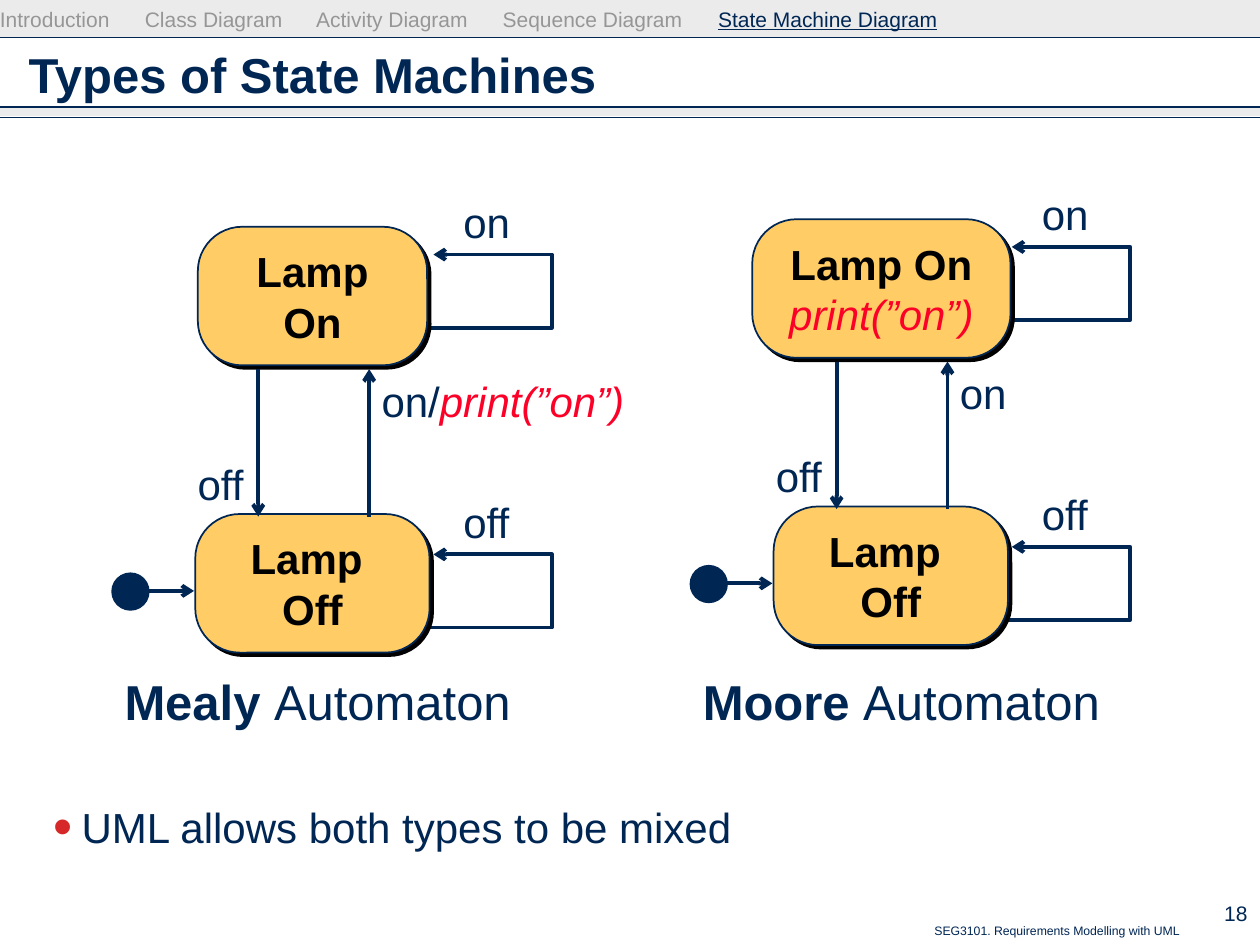
import pptx
import pptx.util
import pptx.dml.color
import pptx.enum.shapes
import pptx.enum.text
from lxml import etree

Inches = pptx.util.Inches
Pt = pptx.util.Pt
RGBColor = pptx.dml.color.RGBColor
SHAPE = pptx.enum.shapes.MSO_SHAPE
ALIGN = pptx.enum.text.PP_ALIGN
ANCHOR = pptx.enum.text.MSO_ANCHOR
AUTO_SIZE = pptx.enum.text.MSO_AUTO_SIZE

NAVY = RGBColor(0x00, 0x26, 0x54)
GRAY = RGBColor(0x96, 0x96, 0x96)
BAND = RGBColor(0xCD, 0xCD, 0xCD)
AMBER = RGBColor(0xFF, 0xCC, 0x66)
RED = RGBColor(0xFC, 0x01, 0x28)
BLACK = RGBColor(0, 0, 0)
BULLET_RED = RGBColor(0xD6, 0x28, 0x28)
ACTION = ("print(”on”)", {"color": RED, "italic": True})


def add_xml(parent, tag, **attributes):
    return etree.SubElement(parent, pptx.oxml.ns.qn(tag), attributes)


def write(para, spans, size, color=NAVY, bold=False):
    """Fill a paragraph with (text, style) spans."""
    para.text = ""
    for text, style in spans:
        span = para.add_run()
        span.text = text
        style_font(span.font, size, **{"color": color, "bold": bold, **style})


def style_font(font, size, color=NAVY, bold=False, italic=False, underline=False):
    font.name = "Arial"
    font.size = Pt(size)
    font.color.rgb = color
    font.bold = bold
    font.italic = italic
    font.underline = underline


def add_text(page, left, top, width, height, spans, size, wrap=True,
             align=ALIGN.LEFT, anchor=ANCHOR.TOP, bold=False):
    box = page.shapes.add_textbox(Inches(left), Inches(top), Inches(width), Inches(height))
    frame = box.text_frame
    frame.word_wrap = wrap
    frame.auto_size = AUTO_SIZE.NONE if wrap else AUTO_SIZE.SHAPE_TO_FIT_TEXT
    frame.vertical_anchor = anchor
    para = frame.paragraphs[0]
    para.alignment = align
    write(para, spans, size, bold=bold)
    return box


def add_label(page, left, top, spans, width=0.57):
    add_text(page, left, top, width, 0.5, spans, 24, wrap=False)


def style_line(shape, width, arrow):
    shape.line.color.rgb = NAVY
    shape.line.width = Pt(width)
    if arrow:
        add_xml(shape.line._get_or_add_ln(), "a:tailEnd", type="arrow")


def add_line(page, start, end, width=2.25, arrow=True):
    line = page.shapes.add_connector(
        pptx.enum.shapes.MSO_CONNECTOR.STRAIGHT,
        Inches(start[0]), Inches(start[1]), Inches(end[0]), Inches(end[1]))
    style_line(line, width, arrow)
    add_xml(line._element.spPr, "a:effectLst")


def add_shape(page, kind, left, top, width, height, fill):
    shape = page.shapes.add_shape(
        kind, Inches(left), Inches(top), Inches(width), Inches(height))
    shape.shadow.inherit = False
    shape.fill.solid()
    shape.fill.fore_color.rgb = fill
    return shape


def add_band(page, top, height):
    band = add_shape(page, SHAPE.RECTANGLE, 0, top, 10, height, BAND)
    band.line.fill.background()
    color = band._element.spPr.find(".//" + pptx.oxml.ns.qn("a:srgbClr"))
    add_xml(color, "a:alpha", val="40000")


def add_self_loop(page, left, top):
    """Transition that leaves a state and comes back to it."""
    right, bottom = left + 1.09, top + 0.58
    builder = page.shapes.build_freeform(Inches(left), Inches(bottom))
    corners = [(right, bottom), (right, top), (left + 0.15, top)]
    builder.add_line_segments([(Inches(x), Inches(y)) for x, y in corners], close=False)
    loop = builder.convert_to_shape()
    loop.shadow.inherit = False
    loop.fill.background()
    style_line(loop, 2.25, True)


def add_state(page, left, top, width, lines):
    state = add_shape(page, SHAPE.ROUNDED_RECTANGLE, left, top, width, 1.1, AMBER)
    state.adjustments[0] = 0.32
    style_line(state, 1, False)
    effects = state._element.spPr.find(pptx.oxml.ns.qn("a:effectLst"))
    shadow = add_xml(effects, "a:outerShdw", blurRad="0", dist=str(Pt(2.8)),
                     dir="2700000", algn="ctr", rotWithShape="0")
    add_xml(shadow, "a:srgbClr", val=str(BLACK))
    frame = state.text_frame
    frame.word_wrap = True
    frame.vertical_anchor = ANCHOR.MIDDLE
    for index, spans in enumerate(lines):
        para = frame.add_paragraph() if index else frame.paragraphs[0]
        para.alignment = ALIGN.CENTER
        write(para, spans, 24, color=BLACK)


def add_lamp_off(page, left, top):
    add_state(page, left, top, 1.86, [[]])
    para = page.shapes[-1].text_frame.paragraphs[0]
    para.text = "Lamp \vOff"
    for span in para.runs:
        style_font(span.font, 24, color=BLACK, bold=True)


def add_machine(page, left, top, name, on_left, on_width, on_lines, on_label, label_width):
    """Lamp automaton; left is its initial node, top its upper state."""
    # Self transitions
    for event, loop_top in (("on", top + 0.22), ("off", top + 2.6)):
        add_self_loop(page, left + 2.4, loop_top)
        add_label(page, left + 2.69, loop_top - 0.51, [(event, {})])

    # States
    add_state(page, on_left, top, on_width, on_lines)
    add_lamp_off(page, left + 0.66, top + 2.28)

    # Transitions between the states
    upper, lower = top + 1.13, top + 2.3
    add_line(page, (left + 1.16, upper), (left + 1.16, lower))
    add_label(page, left + 0.58, top + 1.79, [("off", {})])
    add_label(page, left + 2.04, upper, on_label, label_width)
    add_line(page, (left + 2.04, lower), (left + 2.04, upper))

    # Initial node
    add_line(page, (left + 0.14, top + 2.89), (left + 0.65, top + 2.89))
    node = add_shape(page, SHAPE.OVAL, left, top + 2.75, 0.29, 0.29, NAVY)
    style_line(node, 1, False)

    # Caption
    add_text(page, left, 5.28, 3.6, 0.57,
             [(name + " ", {"bold": True}), ("Automaton", {})], 28)


def add_navigation(page):
    chapters = ["Introduction", "Class Diagram", "Activity Diagram", "Sequence Diagram"]
    spans = [(chapter + "\t", {"color": GRAY}) for chapter in chapters]
    spans.append(("State Machine Diagram", {"underline": True}))
    box = add_text(page, 0, 0.05, 7.9, 0.25, spans, 12)
    box.text_frame.margin_left = box.text_frame.margin_top = 0
    tabs = add_xml(box.text_frame.paragraphs[0]._p.get_or_add_pPr(), "a:tabLst")
    for stop in (1.15, 2.51, 3.99, 5.7):
        add_xml(tabs, "a:tab", pos=str(Inches(stop)), algn="l")


def add_bullet(page, text):
    box = add_text(page, 0.13, 6.35, 9.74, 0.5, [(text, {})], 24)
    para = box.text_frame.paragraphs[0]
    para.line_spacing = Pt(26)
    props = para._p.get_or_add_pPr()
    props.set("marL", str(Inches(0.42)))
    props.set("indent", str(Inches(-0.22)))
    add_xml(add_xml(props, "a:buClr"), "a:srgbClr", val=str(BULLET_RED))
    add_xml(props, "a:buSzPct", val="130000")
    add_xml(props, "a:buFont", typeface="Arial")
    add_xml(props, "a:buChar", char="•")
    style_font(para.font, 24)


def main():
    deck = pptx.Presentation()
    deck.slide_width, deck.slide_height = Inches(10), Inches(7.5)
    page = deck.slides.add_slide(deck.slide_layouts[6])

    # Header bands, rules and footer
    add_band(page, 0, 0.3)
    add_band(page, 0.85, 0.07)
    for height in (0.85, 0.3, 0.93):
        add_line(page, (0, height), (10, height), 0.75, arrow=False)
    add_text(page, 3.25, 7.28, 6.21, 0.22,
             [("SEG3101. Requirements Modelling with UML", {})], 7, align=ALIGN.RIGHT)
    add_text(page, 9.3, 7.08, 0.7, 0.34, [("18", {})], 12,
             align=ALIGN.RIGHT, anchor=ANCHOR.MIDDLE)
    add_navigation(page)

    # Title and statement
    add_text(page, 0.13, 0.26, 9.74, 0.66, [("Types of State Machines", {})], 28,
             anchor=ANCHOR.MIDDLE, bold=True)
    add_bullet(page, "UML allows both types to be mixed")

    # The two automata
    lamp_on = [("Lamp On", {"bold": True})]
    add_machine(page, 5.48, 1.74, "Moore", 5.97, 2.05, [lamp_on, [ACTION]],
                [("on", {})], 0.57)
    add_machine(page, 0.89, 1.8, "Mealy", 1.57, 1.82, [lamp_on],
                [("on/", {}), ACTION], 2.13)

    deck.save("out.pptx")


if __name__ == "__main__":
    main()
